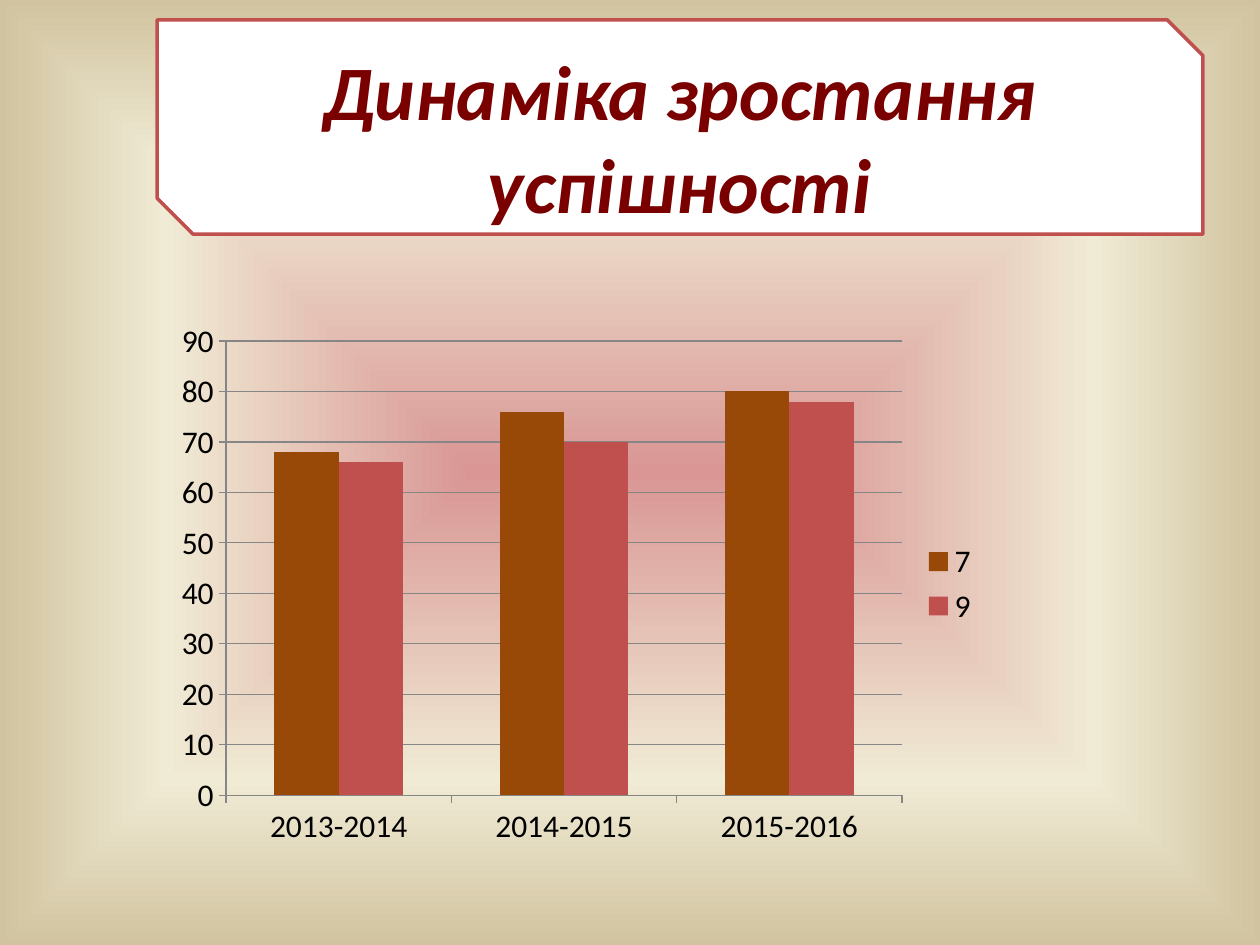
from pptx import Presentation
from pptx.chart.data import CategoryChartData
from pptx.dml.color import RGBColor
from pptx.enum.chart import XL_CHART_TYPE, XL_LEGEND_POSITION, XL_TICK_MARK
from pptx.enum.shapes import MSO_SHAPE
from pptx.enum.text import MSO_ANCHOR, PP_ALIGN
from pptx.oxml import parse_xml
from pptx.oxml.ns import nsdecls
from pptx.util import Cm, Pt

COLUMNS = XL_CHART_TYPE.COLUMN_CLUSTERED
RIGHT = XL_LEGEND_POSITION.RIGHT
OUTSIDE = XL_TICK_MARK.OUTSIDE
SNIPPED = MSO_SHAPE.SNIP_2_DIAG_RECTANGLE
TOP = MSO_ANCHOR.TOP
CENTER = PP_ALIGN.CENTER

FONT = "Calibri"
BLACK = RGBColor(0x00, 0x00, 0x00)
WHITE = RGBColor(0xFF, 0xFF, 0xFF)
GRAY = RGBColor(0x86, 0x86, 0x86)
MAROON = RGBColor(0x7A, 0x00, 0x00)
BROWN = RGBColor(0x98, 0x48, 0x07)
RED = RGBColor(0xC0, 0x50, 0x4D)
PINK = RGBColor(0xD9, 0x96, 0x94)
CREAM = RGBColor(0xF0, 0xEB, 0xD5)
SAND = RGBColor(0xD1, 0xC3, 0x9F)

BACKGROUND_STOPS = [(0, PINK), (65, CREAM), (100, SAND)]
YEARS = ["2013-2014", "2014-2015", "2015-2016"]
SERIES = [("7", [68, 76, 80], BROWN), ("9", [66, 70, 78], RED)]


def set_background(s, stops):
    """Fill the slide with a gradient that spreads from its centre."""
    fill = s.background.fill
    fill.gradient()
    grad = s.background._cSld.bg.bgPr.find(".//{*}gradFill")
    stop_xml = "".join(
        f'<a:gs pos="{pos * 1000}"><a:srgbClr val="{color}"/></a:gs>'
        for pos, color in stops
    )
    grad.getparent().replace(grad, parse_xml(
        f'<a:gradFill {nsdecls("a")} rotWithShape="1"><a:gsLst>{stop_xml}</a:gsLst>'
        '<a:path path="shape"><a:fillToRect l="50000" t="50000" r="50000" b="50000"/>'
        "</a:path></a:gradFill>"
    ))


def format_font(font, size, color, bold=False, italic=False):
    font.name = FONT
    font.size = Pt(size)
    font.color.rgb = color
    font.bold = bold
    font.italic = italic


def add_text(tf, text, align=CENTER, anchor=TOP, **font_format):
    tf.word_wrap = True
    tf.vertical_anchor = anchor
    p = tf.paragraphs[0]
    p.alignment = align
    r = p.add_run()
    r.text = text
    format_font(r.font, **font_format)


def add_title(s, text, left, top, width, height):
    sp = s.shapes.add_shape(SNIPPED, left, top, width, height)
    sp.shadow.inherit = False
    sp.fill.solid()
    sp.fill.fore_color.rgb = WHITE
    sp.line.color.rgb = RED
    sp.line.width = Pt(2)
    add_text(sp.text_frame, text, size=44, color=MAROON, bold=True, italic=True)


def add_column_chart(s, left, top, width, height):
    data = CategoryChartData()
    data.categories = YEARS
    for name, values, _ in SERIES:
        data.add_series(name, values)
    chart = s.shapes.add_chart(COLUMNS, left, top, width, height, data).chart
    chart.has_title = False
    format_font(chart.font, size=18, color=BLACK)

    # Columns
    plot = chart.plots[0]
    plot.gap_width = 150
    plot.overlap = 0
    plot.vary_by_categories = False
    for series, (_, _, color) in zip(plot.series, SERIES):
        series.format.fill.solid()
        series.format.fill.fore_color.rgb = color

    # Axes and gridlines
    value_axis = chart.value_axis
    value_axis.minimum_scale = 0
    value_axis.maximum_scale = 90
    value_axis.major_unit = 10
    value_axis.has_major_gridlines = True
    for axis in (chart.category_axis, value_axis):
        axis.major_tick_mark = OUTSIDE
    for line in (chart.category_axis.format.line, value_axis.format.line,
                 value_axis.major_gridlines.format.line):
        line.color.rgb = GRAY
        line.width = Pt(0.75)

    # Legend
    chart.has_legend = True
    chart.legend.position = RIGHT
    chart.legend.include_in_layout = False


def main():
    prs = Presentation()
    prs.slide_width, prs.slide_height = Cm(25.4), Cm(19.05)
    s = prs.slides.add_slide(prs.slide_layouts[6])
    set_background(s, BACKGROUND_STOPS)
    add_column_chart(s, Cm(3.33), Cm(6.27), Cm(16.66), Cm(11))
    add_title(s, "Динаміка зростання успішності",
              Cm(3.17), Cm(0.4), Cm(21.08), Cm(4.32))
    prs.save("out.pptx")


if __name__ == "__main__":
    main()
